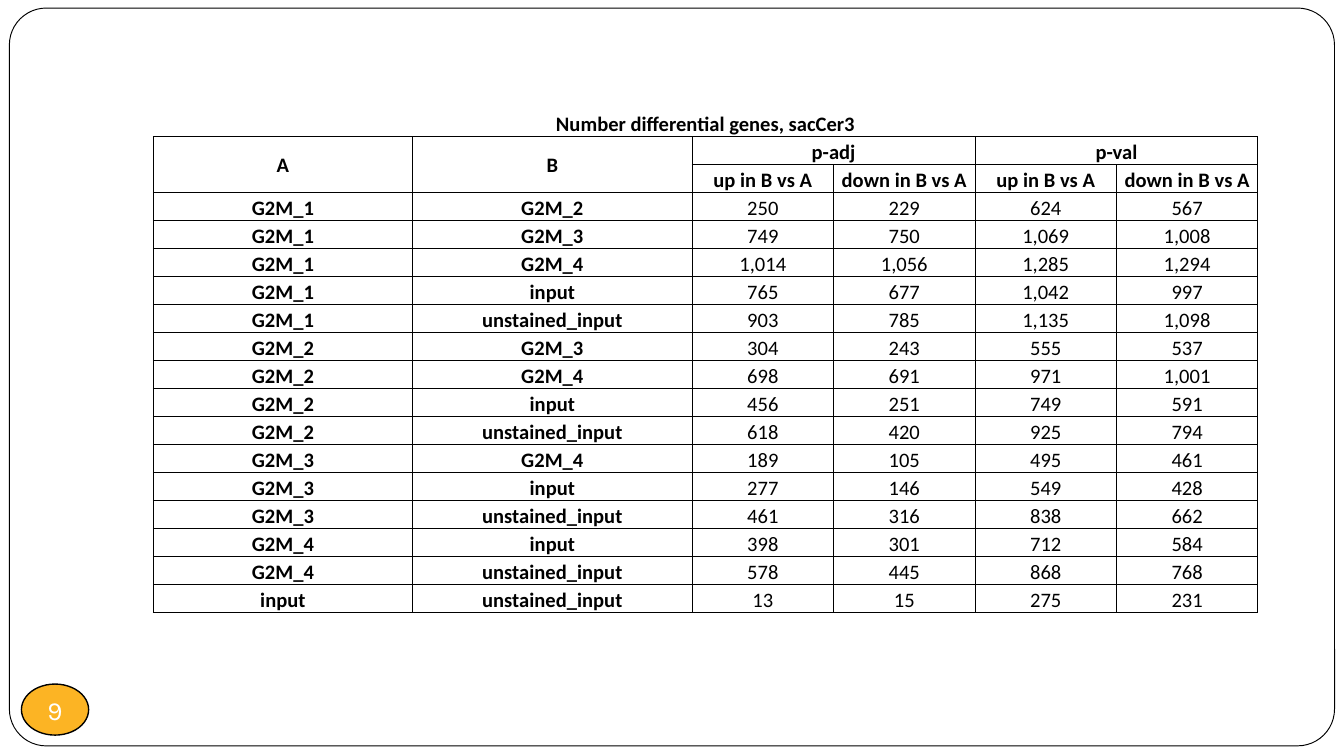
from dataclasses import dataclass

from lxml import etree
from pptx import Presentation
from pptx.dml.color import RGBColor
from pptx.enum.shapes import MSO_SHAPE
from pptx.enum.text import MSO_ANCHOR, PP_ALIGN
from pptx.oxml.ns import qn
from pptx.util import Inches, Pt

ROUNDED, OVAL = MSO_SHAPE.ROUNDED_RECTANGLE, MSO_SHAPE.OVAL
MIDDLE, BOTTOM = MSO_ANCHOR.MIDDLE, MSO_ANCHOR.BOTTOM
CENTER = PP_ALIGN.CENTER


@dataclass(frozen=True)
class Theme:
    black: str = "000000"
    white: str = "FFFFFF"
    badge: str = "FCB424"
    table_font: str = "Calibri"
    number_font: str = "Karla"
    table_size: float = 11
    number_size: float = 14
    thin_line: float = 0.5
    badge_line: float = 0.75


THEME = Theme()

TABLE_WIDTH = 8.22
LABEL_WIDTHS = [1.93, 2.08]
COUNT_WIDTH = (TABLE_WIDTH - sum(LABEL_WIDTHS)) / 4
COLUMN_WIDTHS = LABEL_WIDTHS + [COUNT_WIDTH] * 4
HEADER_ROWS = [
    ["Number differential genes, sacCer3", "", "", "", "", ""],
    ["A", "B", "p-adj", "", "p-val", ""],
    ["", ""] + ["up in B vs A", "down in B vs A"] * 2,
]
# First and last cell of each merged area, as (row, column)
MERGES = [
    ((0, 0), (0, 5)),
    ((1, 0), (2, 0)),
    ((1, 1), (2, 1)),
    ((1, 2), (1, 3)),
    ((1, 4), (1, 5)),
]
GENE_COUNTS = [
    ["G2M_1", "G2M_2", 250, 229, 624, 567],
    ["G2M_1", "G2M_3", 749, 750, 1069, 1008],
    ["G2M_1", "G2M_4", 1014, 1056, 1285, 1294],
    ["G2M_1", "input", 765, 677, 1042, 997],
    ["G2M_1", "unstained_input", 903, 785, 1135, 1098],
    ["G2M_2", "G2M_3", 304, 243, 555, 537],
    ["G2M_2", "G2M_4", 698, 691, 971, 1001],
    ["G2M_2", "input", 456, 251, 749, 591],
    ["G2M_2", "unstained_input", 618, 420, 925, 794],
    ["G2M_3", "G2M_4", 189, 105, 495, 461],
    ["G2M_3", "input", 277, 146, 549, 428],
    ["G2M_3", "unstained_input", 461, 316, 838, 662],
    ["G2M_4", "input", 398, 301, 712, 584],
    ["G2M_4", "unstained_input", 578, 445, 868, 768],
    ["input", "unstained_input", 13, 15, 275, 231],
]


def add_panel(slide, kind, left, top, width, height, fill, line_width):
    shape = slide.shapes.add_shape(
        kind, Inches(left), Inches(top), Inches(width), Inches(height))
    shape.shadow.inherit = False
    shape.fill.solid()
    shape.fill.fore_color.rgb = RGBColor.from_string(fill)
    shape.line.color.rgb = RGBColor.from_string(THEME.black)
    shape.line.width = Pt(line_width)
    return shape


def set_text(text_frame, text, font_name, size, color, bold=False):
    text_frame.text = text
    paragraph = text_frame.paragraphs[0]
    paragraph.alignment = CENTER
    for run in paragraph.runs:
        run.font.name = font_name
        run.font.size = Pt(size)
        run.font.bold = bold
        run.font.color.rgb = RGBColor.from_string(color)


def set_borders(cell, visible_sides):
    """Draw the named sides (L, R, T, B) and hide the others."""
    properties = cell._tc.get_or_add_tcPr()
    for index, side in enumerate("LRTB"):
        line = etree.Element(qn(f"a:ln{side}"), w=str(Pt(THEME.thin_line)))
        if side in visible_sides:
            fill = etree.SubElement(line, qn("a:solidFill"))
            etree.SubElement(fill, qn("a:srgbClr"), val=THEME.black)
        else:
            etree.SubElement(line, qn("a:noFill"))
        properties.insert(index, line)


def format_cell(cell, value, is_title):
    is_label = isinstance(value, str)
    text = value if is_label else f"{value:,}"
    set_text(cell.text_frame, text, THEME.table_font, THEME.table_size,
             THEME.black, bold=is_label)
    cell.margin_left = cell.margin_right = cell.margin_top = Inches(0.01)
    cell.margin_bottom = 0
    cell.vertical_anchor = MIDDLE if value in ("A", "B") else BOTTOM
    cell.fill.background()
    set_borders(cell, "B" if is_title else "LRTB")


def add_gene_table(slide):
    rows = HEADER_ROWS + GENE_COUNTS
    frame = slide.shapes.add_table(
        len(rows), len(COLUMN_WIDTHS),
        Inches(1.14), Inches(0.81), Inches(TABLE_WIDTH), Inches(3.75))
    table = frame.table
    table.first_row = table.horz_banding = False
    for column, width in zip(table.columns, COLUMN_WIDTHS):
        column.width = Inches(width)
    for row_index, values in enumerate(rows):
        for column_index, value in enumerate(values):
            format_cell(table.cell(row_index, column_index), value,
                        is_title=row_index == 0)
    for first, last in MERGES:
        table.cell(*first).merge(table.cell(*last))


def add_slide_number(slide, number):
    badge = add_panel(slide, OVAL, 0.16, 5.09, 0.5, 0.38,
                      THEME.badge, THEME.badge_line)
    text_frame = badge.text_frame
    text_frame.margin_left = text_frame.margin_right = 0
    text_frame.margin_top = text_frame.margin_bottom = 0
    text_frame.vertical_anchor = MIDDLE
    text_frame.word_wrap = False
    set_text(text_frame, number, THEME.number_font, THEME.number_size,
             THEME.white)


def main():
    # Widescreen page, 16:9
    presentation = Presentation()
    presentation.slide_width = Inches(10)
    presentation.slide_height = Inches(10 * 9 / 16)
    slide = presentation.slides.add_slide(presentation.slide_layouts[6])

    # Rounded frame around the slide
    border = add_panel(slide, ROUNDED, 0.07, 0.06, 9.86, 5.49,
                       THEME.white, THEME.thin_line)
    border.adjustments[0] = 0.05

    # Slide number and results
    add_slide_number(slide, "9")
    add_gene_table(slide)

    presentation.save("out.pptx")


if __name__ == "__main__":
    main()
